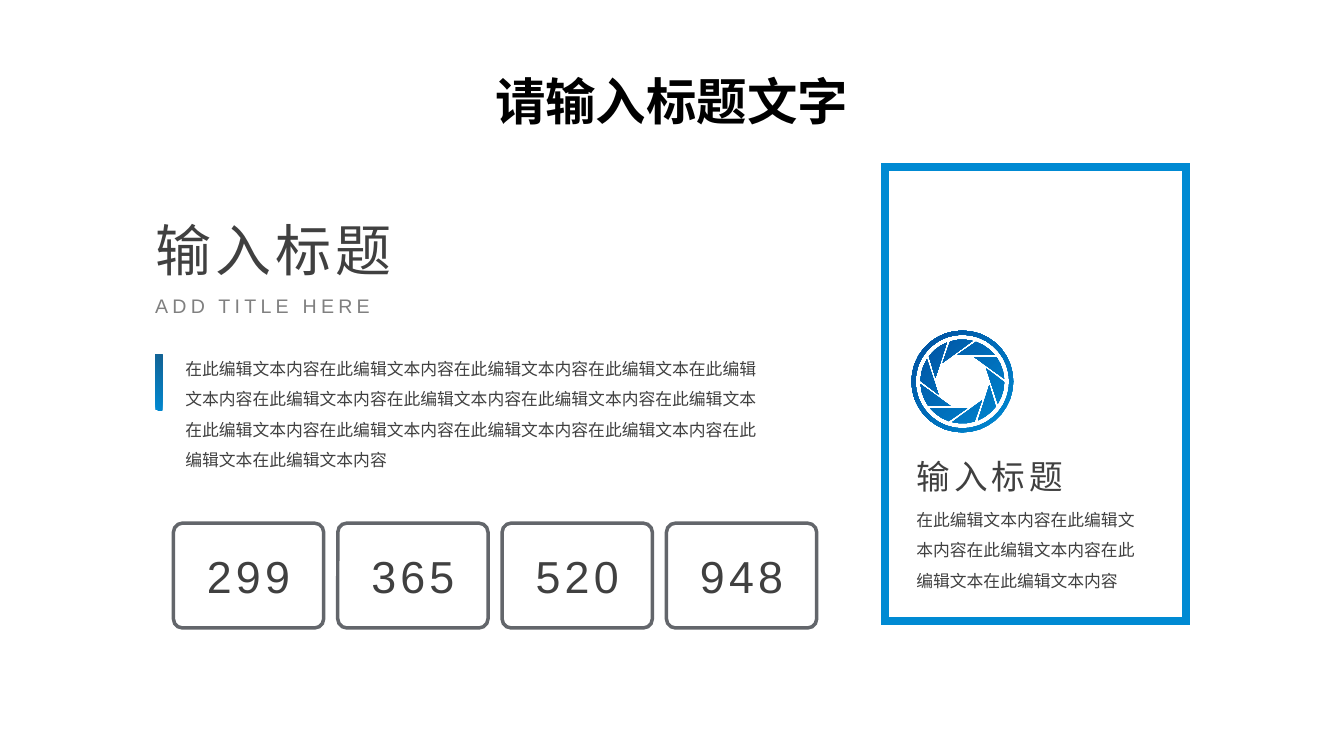
import math

from pptx import Presentation
from pptx.dml.color import RGBColor
from pptx.enum import shapes, text
from pptx.oxml.ns import qn
from pptx.util import Inches, Pt

DARK, GREY, FRAME = "404040", "808080", "63666B"
BLUE, NAVY, TEAL = "008AD3", "014E9E", "146293"
HEADING = "输入标题"
INTRO = (
    "在此编辑文本内容在此编辑文本内容在此编辑文本内容在此编辑文本"
    "在此编辑文本内容在此编辑文本内容在此编辑文本内容在此编辑文本内容在此编辑文本"
    "在此编辑文本内容在此编辑文本内容在此编辑文本内容在此编辑文本内容在此编辑文本"
    "在此编辑文本内容"
)
SUMMARY = "在此编辑文本内容在此编辑文本内容在此编辑文本内容在此编辑文本在此编辑文本内容"
FIGURES = ["299", "365", "520", "948"]


def colour(value):
    return RGBColor.from_string(value)


def write(box, words, size, shade=DARK, font="Arial", bold=False,
          spacing=0, leading=None, align=text.PP_ALIGN.LEFT, wrap=True):
    frame = box.text_frame
    frame.text = words
    frame.word_wrap = wrap
    para = frame.paragraphs[0]
    para.alignment = align
    if leading:
        para.line_spacing = leading
    span = para.runs[0]
    span.font.size = Pt(size)
    span.font.bold = bold
    span.font.color.rgb = colour(shade)
    span.font.name = font
    props = span.font._element
    east_asian = props.makeelement(qn("a:ea"), {"typeface": font})
    props.find(qn("a:latin")).addnext(east_asian)
    if spacing:
        props.set("spc", str(spacing * 100))


def add_text(page, place, words, size, **style):
    box = page.shapes.add_textbox(*map(Inches, place))
    write(box, words, size, **style)


def add_frame(page, kind, place, line, width):
    frame = page.shapes.add_shape(kind, *map(Inches, place))
    frame.shadow.inherit = False
    frame.fill.background()
    frame.line.color.rgb = colour(line)
    frame.line.width = Pt(width)
    outline = frame.line._get_or_add_ln()
    outline.append(outline.makeelement(qn("a:miter"), {"lim": "800000"}))
    return frame


def fill_gradient(shape, start, end):
    shape.shadow.inherit = False
    shape.line.fill.background()
    shape.fill.gradient()
    shape.fill.gradient_angle = 135
    for stop, position, shade in zip(shape.fill.gradient_stops, (0, 1), (start, end)):
        stop.position = position
        stop.color.rgb = colour(shade)


def arc(centre, radius, start, end, steps):
    angles = [math.radians(start + (end - start) * i / steps) for i in range(steps + 1)]
    return [tuple(round(1000 * (middle + radius * turn(a)))
                  for middle, turn in zip(centre, (math.cos, math.sin))) for a in angles]


def add_aperture(page, centre):
    outlines = [arc(centre, radius, 0, 360, 36)[:-1] for radius in (0.505, 0.465)]
    for turn in range(0, 360, 36):
        rim = arc(centre, 0.415, 109 + turn, 140 + turn, 3)
        tip = arc(centre, 0.27, 80 + turn, 80 + turn, 1)[:1]
        outlines.append(rim + tip)
    builder = page.shapes.build_freeform(*outlines[0][0], scale=Inches(1) / 1000)
    for index, outline in enumerate(outlines):
        if index:
            builder.move_to(*outline[0])
        builder.add_line_segments(outline[1:], close=True)
    fill_gradient(builder.convert_to_shape(), BLUE, NAVY)


def add_title(page, words):
    title = page.shapes.title
    title.left, title.top, title.width, title.height = map(Inches, (4.81, 0.64, 3.7, 0.71))
    write(title, words, 36, shade="000000", font="Noto Sans CJK SC", bold=True,
          align=text.PP_ALIGN.CENTER, wrap=False)
    frame = title.text_frame
    frame.margin_left = frame.margin_right = 0
    frame.auto_size = text.MSO_AUTO_SIZE.NONE
    frame.vertical_anchor = text.MSO_ANCHOR.MIDDLE


def add_intro(page):
    bar = page.shapes.add_shape(
        shapes.MSO_SHAPE.RECTANGLE, *map(Inches, (1.3, 3.76, 0.55, 0.07)))
    bar.rotation = 90
    fill_gradient(bar, BLUE, TEAL)
    add_text(page, (1.44, 2.09, 2.62, 0.77), HEADING, 40, spacing=3)
    add_text(page, (1.44, 2.87, 3.12, 0.34), "ADD TITLE HERE", 14, shade=GREY, spacing=3)
    add_text(page, (1.74, 3.41, 5.98, 1.31), INTRO, 12, leading=1.5)


def add_figures(page):
    for column, figure in enumerate(FIGURES):
        left = 1.72 + 1.63 * column
        tile = add_frame(page, shapes.MSO_SHAPE.ROUNDED_RECTANGLE,
                         (left, 5.19, 1.49, 1.04), FRAME, 2.5)
        tile.adjustments[0] = 0.087
        add_text(page, (left + 0.14, 5.39, 1.21, 0.64), figure, 32,
                 spacing=3, align=text.PP_ALIGN.CENTER)


def add_card(page):
    add_frame(page, shapes.MSO_SHAPE.RECTANGLE, (8.78, 1.66, 2.98, 4.5), BLUE, 5.5)
    add_aperture(page, (9.545, 3.785))
    add_text(page, (8.99, 4.47, 2.55, 0.5), HEADING, 24, spacing=3)
    add_text(page, (8.99, 4.91, 2.52, 1.01), SUMMARY, 12, leading=1.5)


def main():
    deck = Presentation()
    deck.slide_width, deck.slide_height = Inches(13.33), Inches(7.5)
    page = deck.slides.add_slide(deck.slide_layouts[5])
    add_title(page, "请输入标题文字")
    add_intro(page)
    add_figures(page)
    add_card(page)
    deck.save("out.pptx")


if __name__ == "__main__":
    main()
